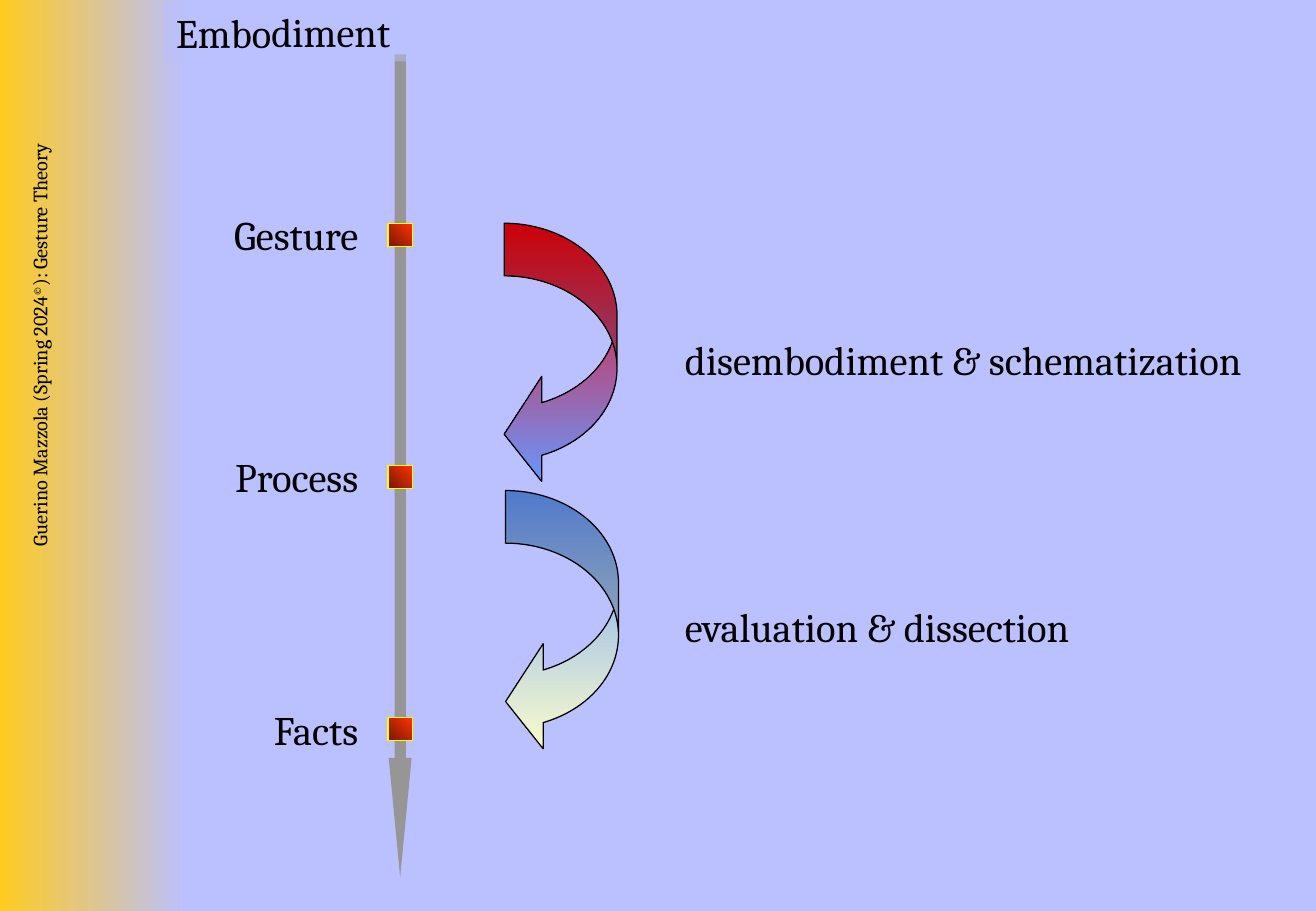
from collections import namedtuple
from dataclasses import dataclass

from lxml import etree
from pptx import Presentation
from pptx import util as u
from pptx.dml import color
from pptx.enum import shapes, text
from pptx.oxml import ns

Box = namedtuple("Box", "left top width height")


@dataclass(frozen=True)
class Theme:
    font: str = "Cambria"
    body: int = 24
    credit: int = 12
    ink: str = "000000"
    ground: str = "BBC0FF"
    gold: str = "FFCB1F"
    axis: str = "969696"
    marker: tuple = ("761800", "FF3300")
    marker_line: str = "FFFF00"
    red_blue: tuple = ("FF020B", "6699FF")
    blue_cream: tuple = ("6699FF", "FDFECA")


THEME = Theme()
SHAPE = shapes.MSO_SHAPE
LINE_HEIGHT = 1.27


def rgb(value):
    return color.RGBColor.from_string(value)


def lengths(box):
    return [u.Cm(value) for value in box]


def add_shape(page, kind, box, fill, line=None, angle=0):
    """Add a shape with a plain fill, or a gradient when given two colours."""
    shape = page.shapes.add_shape(kind, *lengths(box))
    shape.shadow.inherit = False
    if isinstance(fill, tuple):
        shape.fill.gradient()
        shape.fill.gradient_angle = angle
        for stop, value, position in zip(shape.fill.gradient_stops, fill, (0, 1)):
            stop.color.rgb = rgb(value)
            stop.position = position
    else:
        shape.fill.solid()
        shape.fill.fore_color.rgb = rgb(fill)
    if line:
        shape.line.color.rgb = rgb(line)
        shape.line.width = u.Pt(0.75)
    else:
        shape.line.fill.background()
    return shape


def write(shape, parts, size=THEME.body, align=text.PP_ALIGN.LEFT, wrap=False):
    frame = shape.text_frame
    frame.word_wrap = wrap
    frame.vertical_anchor = text.MSO_ANCHOR.TOP
    para = frame.paragraphs[0]
    para.alignment = align
    para.font.name = THEME.font
    para.font.size = u.Pt(size)
    para.font.color.rgb = rgb(THEME.ink)
    for part in parts:
        para.add_run().text = part
    return para


def add_text(page, box, *parts, **style):
    shape = page.shapes.add_textbox(*lengths(box))
    return shape, write(shape, parts, **style)


def add_sidebar(page, box):
    add_shape(page, SHAPE.RECTANGLE, box, (THEME.gold, THEME.ground))
    # Credit line reading upwards
    length = 14.35
    centre_x, centre_y = box.left + 1.08, box.top + 9.93
    credit, para = add_text(
        page,
        Box(centre_x - length / 2, centre_y - LINE_HEIGHT / 2, length, LINE_HEIGHT),
        "Guerino Mazzola (Spring 2024", "©", "): Gesture Theory",
        size=THEME.credit, align=text.PP_ALIGN.RIGHT, wrap=True)
    credit.rotation = 270
    para.runs[1].font._element.set("baseline", "30000")


def add_axis(page, box, levels):
    # Downward arrow, drawn lying and turned about its centre
    centre_x, centre_y = box.left + box.width / 2, box.top + box.height / 2
    thickness = 0.48
    arrow = add_shape(
        page, SHAPE.RIGHT_ARROW,
        Box(centre_x - box.height / 2, centre_y - thickness / 2, box.height, thickness),
        THEME.axis)
    arrow.rotation = 90
    arrow.adjustments[0], arrow.adjustments[1] = 0.49, 5.19

    # One marker and label for each level
    for name, offset, width in levels:
        top = box.top + offset
        add_shape(page, SHAPE.FLOWCHART_PROCESS,
                  Box(box.left, top, box.width, thickness),
                  THEME.marker, THEME.marker_line, angle=45)
        add_text(page, Box(box.left - 0.37 - width, top - 0.4, width, LINE_HEIGHT),
                 name, align=text.PP_ALIGN.RIGHT)


def add_transition(page, box, caption, caption_width, fill):
    # Curved arrow, drawn lying and turned about its centre
    centre_x, centre_y = box.left + box.width / 2, box.top + box.height / 2
    arrow = add_shape(
        page, SHAPE.CURVED_UP_ARROW,
        Box(centre_x - box.height / 2, centre_y - box.width / 2, box.height, box.width),
        fill, THEME.ink)
    arrow.rotation = 270
    arrow._element.spPr.find(ns.qn("a:xfrm")).set("flipH", "1")
    for index, value in enumerate((0.466, 0.931, 0.333)):
        arrow.adjustments[index] = value
    add_text(page, Box(14.07, box.top + 2.21, caption_width, LINE_HEIGHT),
             caption, wrap=True)


def add_heading(page, box):
    heading = add_shape(page, SHAPE.RECTANGLE, box, THEME.ground)
    heading.rotation = 359.7
    tint = heading._element.spPr.find(ns.qn("a:solidFill"))[0]
    etree.SubElement(tint, ns.qn("a:alpha"), val="50000")
    write(heading, ["Embodiment"])


def main():
    deck = Presentation()
    deck.slide_width, deck.slide_height = u.Cm(27.51), u.Cm(19.05)
    page = deck.slides.add_slide(deck.slide_layouts[6])
    page.background.fill.solid()
    page.background.fill.fore_color.rgb = rgb(THEME.ground)

    add_sidebar(page, Box(0, 0, 3.91, 19.05))
    add_axis(page, Box(8.11, 1.14, 0.51, 17.2), [
        ("Gesture", 3.53, 3.15),
        ("Process", 8.59, 3.1),
        ("Facts", 13.87, 2.29),
    ])
    add_transition(page, Box(10.54, 4.67, 2.36, 5.51),
                   "disembodiment & schematization", 13, THEME.red_blue)
    add_transition(page, Box(10.57, 10.26, 2.36, 5.51),
                   "evaluation & dissection", 9.22, THEME.blue_cream)
    add_heading(page, Box(3.43, 0.03, 5.11, LINE_HEIGHT))
    deck.save("out.pptx")


if __name__ == "__main__":
    main()
